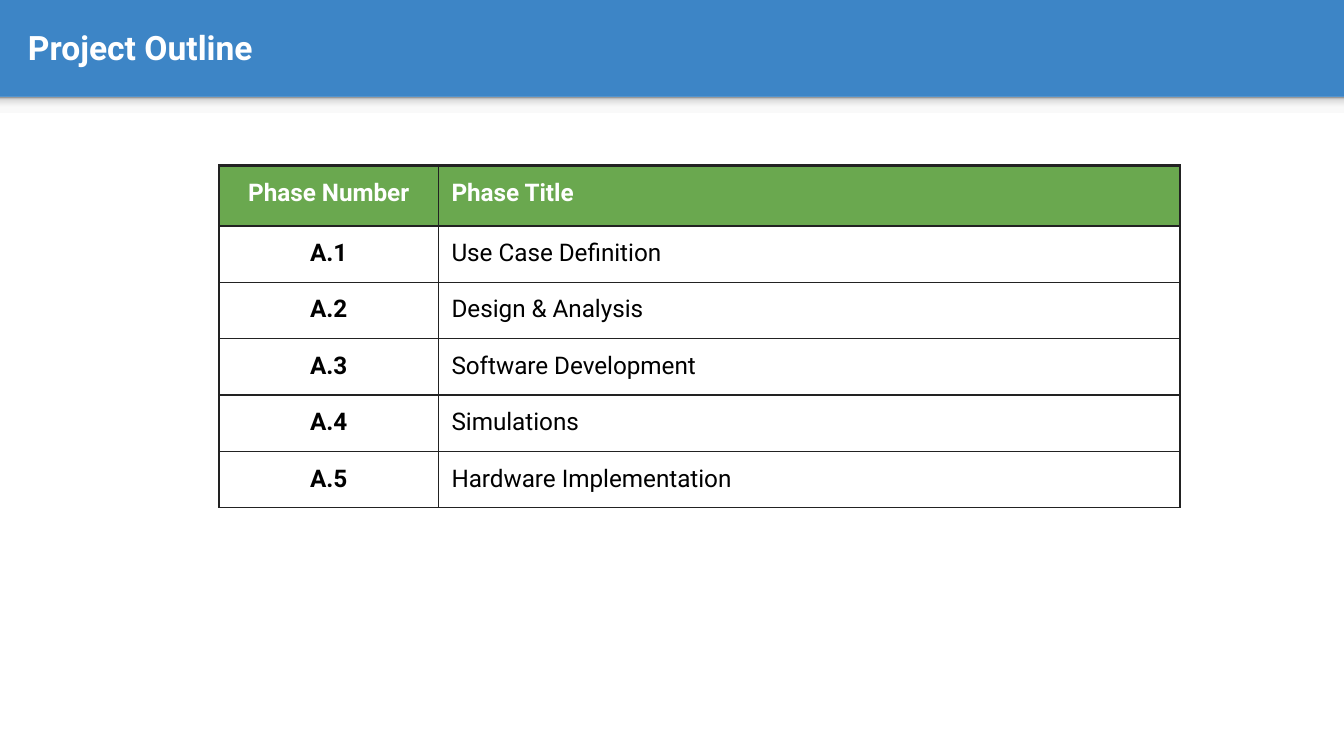
import pptx
import pptx.dml.color
import pptx.enum.shapes
import pptx.enum.text
import pptx.oxml.ns
import pptx.util
from lxml import etree
from pptx.util import Inches

FONT = "Roboto"
BLUE, GREEN, WHITE, BLACK = "3D85C6", "6AA84F", "FFFFFF", "000000"
BORDER = "222222"
SHADOW_STOPS = [(0, "F9F9F9"), (36, "F9F9F9"), (80, "DEDEDE"), (100, "999999")]
ROWS = [
    ("Phase Number", "Phase Title"),
    ("A.1", "Use Case Definition"),
    ("A.2", "Design & Analysis"),
    ("A.3", "Software Development"),
    ("A.4", "Simulations"),
    ("A.5", "Hardware Implementation"),
]
COLUMN_WIDTHS = [1.63, 5.52]
HEADER_HEIGHT, ROW_HEIGHT = 0.45, 0.42


def color(value):
    return pptx.dml.color.RGBColor.from_string(value)


def add_child(parent, tag, **attributes):
    return etree.SubElement(parent, pptx.oxml.ns.qn(tag), attributes)


def fill_solid(fill, value):
    fill.solid()
    fill.fore_color.rgb = color(value)


def format_text(paragraph, size, value, bold):
    font = paragraph.runs[0].font
    font.name = FONT
    font.size = pptx.util.Pt(size)
    font.bold = bold
    font.color.rgb = color(value)


def add_rectangle(slide, left, top, width, height):
    shape = slide.shapes.add_shape(
        pptx.enum.shapes.MSO_SHAPE.RECTANGLE,
        Inches(left), Inches(top), Inches(width), Inches(height))
    shape.shadow.inherit = False
    shape.line.fill.background()
    return shape


def fill_gradient(shape, stops):
    shape.fill.gradient()
    shape.fill.gradient_angle = 90
    stop_list = shape.element.spPr.find(".//" + pptx.oxml.ns.qn("a:gsLst"))
    for old_stop in list(stop_list):
        stop_list.remove(old_stop)
    for position, value in stops:
        stop = add_child(stop_list, "a:gs", pos=str(position * 1000))
        add_child(stop, "a:srgbClr", val=value)


def add_title(slide, text):
    box = slide.shapes.add_textbox(Inches(0.11), Inches(0.02), Inches(9.65), Inches(0.66))
    frame = box.text_frame
    frame.word_wrap = True
    frame.vertical_anchor = pptx.enum.text.MSO_ANCHOR.MIDDLE
    frame.margin_left = frame.margin_right = Inches(0.1)
    frame.margin_top = frame.margin_bottom = Inches(0.1)
    frame.text = text
    format_text(frame.paragraphs[0], 18, WHITE, True)


def set_borders(cell, top, bottom):
    properties = cell._tc.get_or_add_tcPr()
    for side, width in (("L", 0.75), ("R", 0.75), ("T", top), ("B", bottom)):
        line = add_child(properties, "a:ln" + side, w=str(pptx.util.Pt(width)))
        add_child(add_child(line, "a:solidFill"), "a:srgbClr", val=BORDER)


def format_cell(cell, text, row, column):
    is_header = row == 0
    cell.margin_left = cell.margin_right = Inches(0.1)
    cell.margin_top = cell.margin_bottom = Inches(0.1)
    # Heavier lines above and below the header
    set_borders(cell, 1.5 if row <= 1 else 0.75, 1.5 if is_header else 0.75)
    if is_header:
        fill_solid(cell.fill, GREEN)
    else:
        cell.fill.background()
    cell.text_frame.text = text
    paragraph = cell.text_frame.paragraphs[0]
    if column == 0:
        paragraph.alignment = pptx.enum.text.PP_ALIGN.CENTER
    format_text(paragraph, 13, WHITE if is_header else BLACK, is_header or column == 0)


def add_phase_table(slide):
    heights = [HEADER_HEIGHT] + [ROW_HEIGHT] * (len(ROWS) - 1)
    table = slide.shapes.add_table(
        len(ROWS), len(COLUMN_WIDTHS), Inches(1.63), Inches(1.23),
        Inches(sum(COLUMN_WIDTHS)), Inches(sum(heights))).table
    table.first_row = table.horz_banding = False
    for column, width in zip(table.columns, COLUMN_WIDTHS):
        column.width = Inches(width)
    for row, height in zip(table.rows, heights):
        row.height = Inches(height)
    for row, texts in enumerate(ROWS):
        for column, text in enumerate(texts):
            format_cell(table.cell(row, column), text, row, column)


def main():
    presentation = pptx.Presentation()
    # Widescreen, 16:9
    presentation.slide_width = Inches(10)
    presentation.slide_height = Inches(10) * 9 // 16
    slide = presentation.slides.add_slide(presentation.slide_layouts[6])

    # Blue header band, white body and the soft shadow between them
    fill_solid(slide.background.fill, BLUE)
    body = add_rectangle(slide, 0, 0.72, 10, 4.91)
    fill_solid(body.fill, WHITE)
    band_shadow = add_rectangle(slide, 0, 0.72, 10, 0.12)
    fill_gradient(band_shadow, SHADOW_STOPS)

    # Content
    add_title(slide, "Project Outline")
    add_phase_table(slide)
    presentation.save("out.pptx")


if __name__ == "__main__":
    main()
